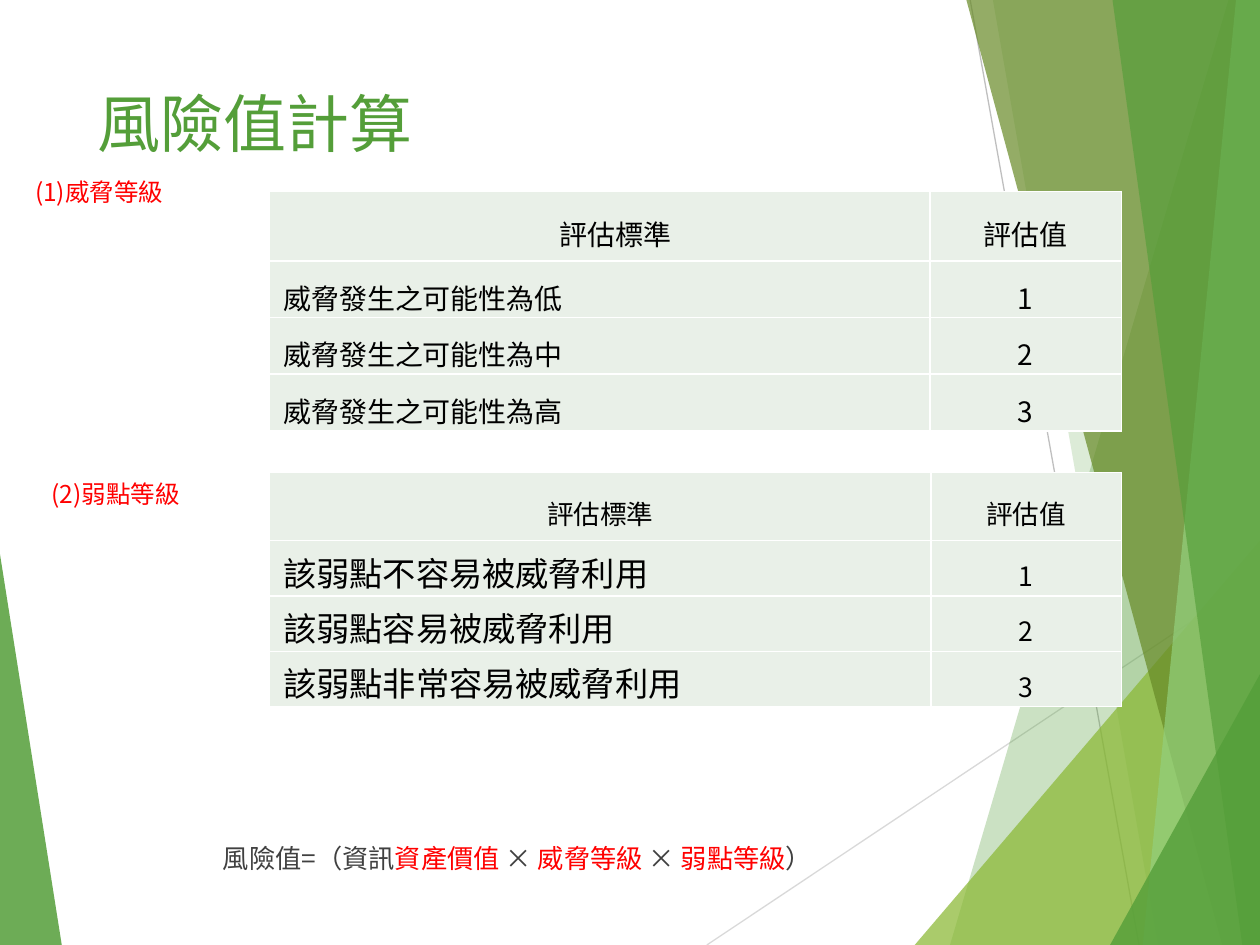
import pptx
import pptx.dml.color
import pptx.enum.shapes
import pptx.enum.text
import pptx.oxml
import pptx.oxml.ns
import pptx.util
from lxml import etree

FONT = "Noto Sans CJK SC"
GREEN, RED, BLACK, GRAY = "549E39", "FF0000", "000000", "404040"
COLUMNS, ROWS = 100, 75
ALIGN = pptx.enum.text.PP_ALIGN
ANCHOR = pptx.enum.text.MSO_ANCHOR


def color(value):
    return pptx.dml.color.RGBColor.from_string(value)


def add_xml(parent, tag, **attributes):
    return etree.SubElement(parent, pptx.oxml.ns.qn(tag), attributes)


class Page:
    def __init__(self, deck):
        self.unit = deck.slide_width / COLUMNS
        self.slide = deck.slides.add_slide(deck.slide_layouts[5])
        self.shapes = self.slide.shapes

    def grid(self, *values):
        return [pptx.util.Emu(round(value * self.unit)) for value in values]

    def style(self, span, size, ink, small_caps=False):
        span.font.size = pptx.util.Pt(size)
        span.font.name = FONT
        span.font.bold = False
        span.font.color.rgb = color(ink)
        properties = span._r.get_or_add_rPr()
        add_xml(properties, "a:ea", typeface=FONT)
        if small_caps:
            properties.set("cap", "small")

    def facet(self, points, fill, opacity):
        corners = [tuple(self.grid(*point)) for point in points]
        builder = self.shapes.build_freeform(*corners[0])
        builder.add_line_segments(corners[1:], close=True)
        shape = builder.convert_to_shape()
        shape.shadow.inherit = False
        shape.line.fill.background()
        shape.fill.solid()
        shape.fill.fore_color.rgb = color(fill)
        tint = shape._element.spPr.find(".//" + pptx.oxml.ns.qn("a:srgbClr"))
        add_xml(tint, "a:alpha", val=str(opacity * 1000))

    def line(self, start, end, ink):
        line = self.shapes.add_connector(
            pptx.enum.shapes.MSO_CONNECTOR.STRAIGHT, *self.grid(*start, *end))
        line.line.color.rgb = color(ink)
        line.line.width = pptx.util.Pt(0.75)
        add_xml(line._element.spPr, "a:effectLst")

    def title(self, text, place):
        box = self.shapes.title
        box.left, box.top, box.width, box.height = self.grid(*place)
        frame = box.text_frame
        frame.text = text
        frame.auto_size = pptx.enum.text.MSO_AUTO_SIZE.NONE
        frame.vertical_anchor = ANCHOR.TOP
        frame.margin_top = 0
        frame.paragraphs[0].alignment = ALIGN.LEFT
        self.style(frame.paragraphs[0].runs[0], 36, GREEN)

    def text(self, pieces, place, size, wrap=False):
        frame = self.shapes.add_textbox(*self.grid(*place)).text_frame
        frame.word_wrap = wrap
        frame.vertical_anchor = ANCHOR.MIDDLE
        for text, ink in pieces:
            span = frame.paragraphs[0].add_run()
            span.text = text
            self.style(span, size, ink)

    def cell(self, cell, text, size, margin, centered, small_caps, anchor):
        cell.fill.solid()
        cell.fill.fore_color.rgb = color("E9F0E8")
        cell.margin_left = cell.margin_right = self.grid(margin)[0]
        cell.margin_top = cell.margin_bottom = 0
        cell.vertical_anchor = anchor
        cell.text = text
        para = cell.text_frame.paragraphs[0]
        para.alignment = ALIGN.CENTER if centered else ALIGN.LEFT
        para.line_spacing = 1.15
        self.style(para.runs[0], size, BLACK, small_caps)
        properties = cell._tc.get_or_add_tcPr()
        for index, side in enumerate(("L", "R", "T", "B")):
            border = pptx.oxml.parse_xml(
                f'<a:ln{side} {pptx.oxml.ns.nsdecls("a")} w="12700"><a:solidFill>'
                f'<a:srgbClr val="FFFFFF"/></a:solidFill></a:ln{side}>')
            properties.insert(index, border)

    def rating_table(self, criteria, place, widths, heights, size, margin,
                     small_criteria, criteria_anchor):
        rows = [("評估標準", "評估值")]
        rows += [(text, str(value)) for value, text in enumerate(criteria, 1)]
        table = self.shapes.add_table(
            len(rows), 2, *self.grid(*place, sum(widths), sum(heights))).table
        table.first_row = table.horz_banding = False
        for column, width in zip(table.columns, self.grid(*widths)):
            column.width = width
        for row, height in zip(table.rows, self.grid(*heights)):
            row.height = height
        for r, texts in enumerate(rows):
            for c, text in enumerate(texts):
                criterion = r > 0 and c == 0
                self.cell(table.cell(r, c), text, size, margin, not criterion,
                          small_criteria or not criterion,
                          criteria_anchor if criterion else ANCHOR.MIDDLE)
        return table


def main():
    deck = pptx.Presentation()
    deck.slide_width = pptx.util.Inches(10)
    deck.slide_height = pptx.util.Inches(7.5)
    page = Page(deck)

    page.facet([(0, 44), (4.9, ROWS), (0, ROWS)], GREEN, 85)
    page.line((56.1, ROWS), (COLUMNS, 45.7), "D9D9D9")
    page.line((77, 0), (90.4, ROWS), "BFBFBF")
    right_edge = [(COLUMNS, ROWS), (COLUMNS, 0)]
    for top, bottom, fill, opacity in [
            (97.5, 75.4, GREEN, 30), (78.8, 91.9, GREEN, 20)]:
        page.facet([(top, 0), (bottom, ROWS)] + right_edge, fill, opacity)
    page.facet([(72.6, ROWS), (COLUMNS, 42.9), (COLUMNS, ROWS)], "8AB833", 72)
    for top, bottom, fill, opacity in [
            (76.7, 97, "678A26", 70), (98.1, 90.7, "93D07D", 70),
            (88.3, 98.6, GREEN, 65)]:
        page.facet([(top, 0), (bottom, ROWS)] + right_edge, fill, opacity)
    page.facet([(88.1, ROWS), (COLUMNS, 53.5), (COLUMNS, ROWS)], GREEN, 80)

    page.title("風險值計算", (6.7, 6.7, 69.4, 14.4))
    page.text([("風險值=（資訊", GRAY), ("資產價值 ", RED), ("× ", GRAY),
               ("威脅等級 ", RED), ("× ", GRAY), ("弱點等級", RED), ("）", GRAY)],
              (16.7, 65.9, 59.4, 4.4), 15, wrap=True)

    threat_table = page.rating_table(
        [f"威脅發生之可能性為{level}" for level in "低中高"],
        (21.4, 15.2), (52.4, 15.2), (5.5, 4.5, 4.5, 4.5), 20, 1.1,
        True, ANCHOR.MIDDLE)
    header = threat_table.cell(0, 0).text_frame.paragraphs[0]
    header._p.get_or_add_pPr().set("marL", str(pptx.util.Inches(0.25)))
    page.text([("(1)威脅等級", RED)], (1.8, 13.5, 12.9, 3.4), 14)

    page.rating_table(
        [f"該弱點{ease}被威脅利用" for ease in ("不容易", "容易", "非常容易")],
        (21.4, 37.5), (52.5, 15.1), (5.4, 4.4, 4.4, 4.4), 19, 1.1,
        False, ANCHOR.TOP)
    page.text([("(2)弱點等級", RED)], (3.1, 37.5, 12.9, 3.4), 14)

    deck.save("out.pptx")


if __name__ == "__main__":
    main()
